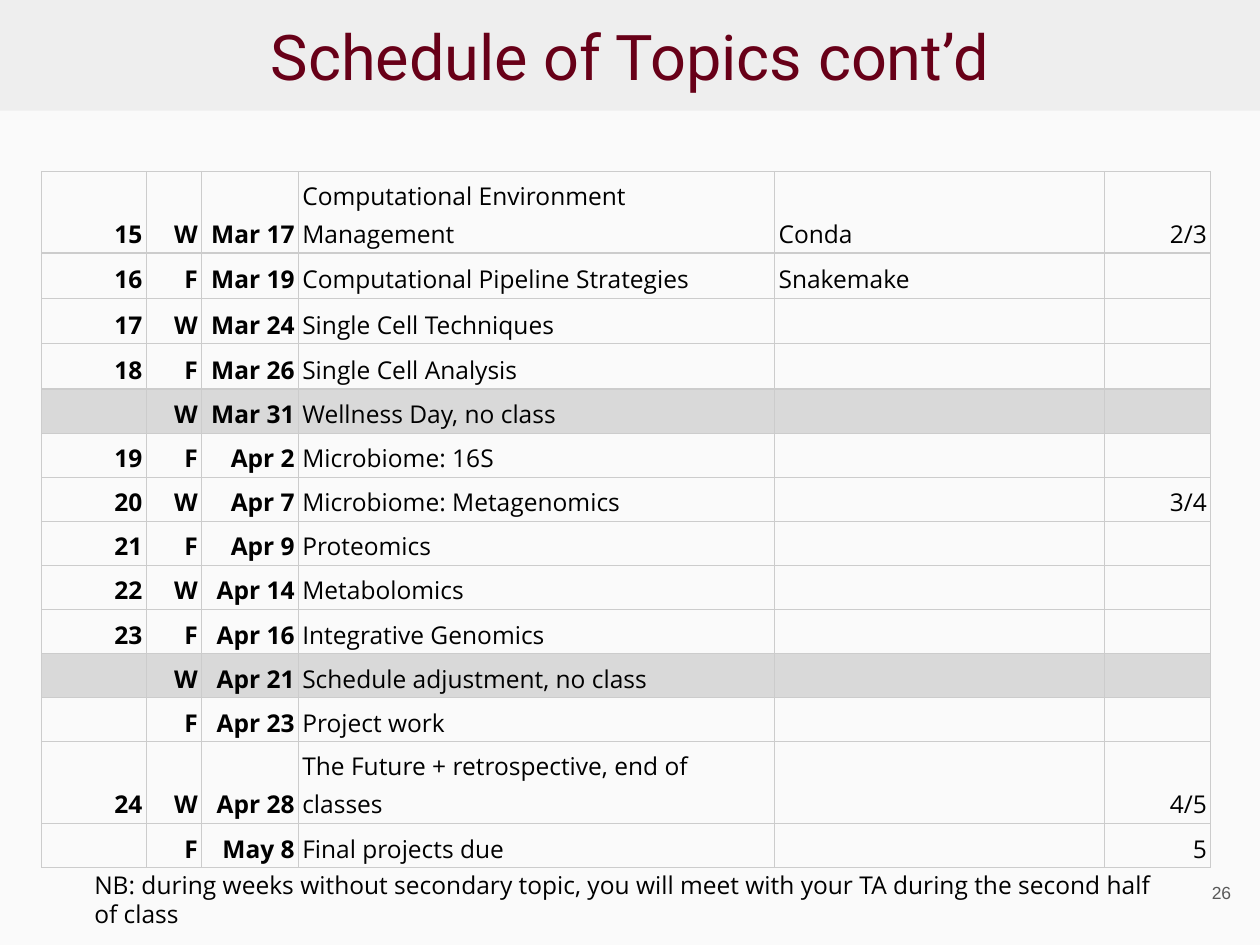
from typing import NamedTuple

from lxml import etree
from pptx import Presentation, util as u
from pptx.dml.color import RGBColor
from pptx.enum import text
from pptx.oxml.ns import qn

COLORS = {"page": "FAFAFA", "band": "EEEEEE", "title": "680018", "ink": "000000",
          "number": "595959", "grid": "CCCCCC", "no_class": "D9D9D9"}
WIDTH, HEIGHT = u.Inches(10), u.Inches(7.5)
LEFT, RIGHT, CENTER = text.PP_ALIGN.LEFT, text.PP_ALIGN.RIGHT, text.PP_ALIGN.CENTER


class Column(NamedTuple):
    width: float
    align: text.PP_ALIGN = LEFT
    bold: bool = False


class Session(NamedTuple):
    number: str
    day: str
    date: str
    topic: str
    secondary: str = ""
    assignment: str = ""


COLUMNS = [Column(0.83, RIGHT, True), Column(0.44, RIGHT, True), Column(0.77, RIGHT, True),
           Column(3.78), Column(2.62), Column(0.84, RIGHT)]
SESSIONS = [
    Session("15", "W", "Mar 17", "Computational Environment Management", "Conda", "2/3"),
    Session("16", "F", "Mar 19", "Computational Pipeline Strategies", "Snakemake"),
    Session("17", "W", "Mar 24", "Single Cell Techniques"),
    Session("18", "F", "Mar 26", "Single Cell Analysis"),
    Session("", "W", "Mar 31", "Wellness Day, no class"),
    Session("19", "F", "Apr 2", "Microbiome: 16S"),
    Session("20", "W", "Apr 7", "Microbiome: Metagenomics", assignment="3/4"),
    Session("21", "F", "Apr 9", "Proteomics"),
    Session("22", "W", "Apr 14", "Metabolomics"),
    Session("23", "F", "Apr 16", "Integrative Genomics"),
    Session("", "W", "Apr 21", "Schedule adjustment, no class"),
    Session("", "F", "Apr 23", "Project work"),
    Session("24", "W", "Apr 28", "The Future + retrospective, end of classes", assignment="4/5"),
    Session("", "F", "May 8", "Final projects due", assignment="5"),
]


def rgb(name: str) -> RGBColor:
    return RGBColor.from_string(COLORS[name])


def write(p, words: str, size: float, font: str, color: str, align=LEFT, bold=False) -> None:
    p.alignment = align
    r = p.add_run()
    r.text = words
    r.font.size, r.font.name, r.font.bold = u.Pt(size), font, bold
    r.font.color.rgb = rgb(color)


def frame(sp, anchor):
    """Set even insets, wrapping and anchor; return the text frame."""
    tf = sp.text_frame
    tf.word_wrap, tf.auto_size = True, text.MSO_AUTO_SIZE.NONE
    tf.vertical_anchor = anchor
    tf.margin_left = tf.margin_right = tf.margin_top = tf.margin_bottom = u.Inches(0.1)
    return tf


def place(sp, x: float, y: float, w: float, h: float) -> None:
    """Position a shape by shares of the slide's size."""
    sp.left, sp.top = int(WIDTH * x), int(HEIGHT * y)
    sp.width, sp.height = int(WIDTH * w), int(HEIGHT * h)


def add_text(s, box, words, size, font, color, align, anchor) -> None:
    sp = s.shapes.add_textbox(0, 0, 0, 0)
    place(sp, *box)
    write(frame(sp, anchor).paragraphs[0], words, size, font, color, align)


def add_borders(cell) -> None:
    tc_pr = cell._tc.get_or_add_tcPr()
    for side in ("a:lnL", "a:lnR", "a:lnT", "a:lnB"):
        ln = etree.SubElement(tc_pr, qn(side), w=str(u.Pt(0.75)))
        fill = etree.SubElement(ln, qn("a:solidFill"))
        etree.SubElement(fill, qn("a:srgbClr"), val=COLORS["grid"])


def fill_cell(cell, words: str, col: Column, shaded: bool) -> None:
    cell.margin_left = cell.margin_right = u.Inches(0.03)
    cell.margin_top = cell.margin_bottom = u.Inches(0.02)
    cell.vertical_anchor = text.MSO_ANCHOR.BOTTOM
    add_borders(cell)
    if shaded:
        cell.fill.solid()
        cell.fill.fore_color.rgb = rgb("no_class")
    else:
        cell.fill.background()
    if words:
        p = cell.text_frame.paragraphs[0]
        p.line_spacing = 1.15
        write(p, words, 14, "Open Sans", "ink", col.align, col.bold)


def add_schedule(s) -> None:
    row_height = u.Inches(0.35)
    table = s.shapes.add_table(len(SESSIONS), len(COLUMNS), u.Inches(0.33), u.Inches(1.36),
                               u.Inches(sum(c.width for c in COLUMNS)),
                               row_height * len(SESSIONS)).table
    table.first_row = table.horz_banding = False
    for j, col in enumerate(COLUMNS):
        table.columns[j].width = u.Inches(col.width)
    for i, session in enumerate(SESSIONS):
        table.rows[i].height = u.Inches(0.36) if i < 4 else row_height
        shaded = session.topic.endswith("no class")
        for j, (words, col) in enumerate(zip(session, COLUMNS)):
            fill_cell(table.cell(i, j), words, col, shaded)


def main() -> None:
    prs = Presentation()
    prs.slide_width, prs.slide_height = WIDTH, HEIGHT
    s = prs.slides.add_slide(prs.slide_layouts[5])
    s.background.fill.solid()
    s.background.fill.fore_color.rgb = rgb("page")

    # Title band
    title = s.shapes.title
    place(title, 0, 0, 1, 0.117)
    title.fill.solid()
    title.fill.fore_color.rgb = rgb("band")
    tf = frame(title, text.MSO_ANCHOR.MIDDLE)
    write(tf.paragraphs[0], "Schedule of Topics cont’d", 36, "Roboto", "title", CENTER)

    # Slide number
    add_text(s, (0.927, 0.907, 0.06, 0.076), "26", 10, "Arial", "number",
             RIGHT, text.MSO_ANCHOR.MIDDLE)

    # Schedule table
    add_schedule(s)

    # Footnote
    add_text(s, (0.065, 0.907, 0.87, 0.09),
             "NB: during weeks without secondary topic, you will meet with your TA "
             "during the second half of class",
             14, "Open Sans", "ink", LEFT, text.MSO_ANCHOR.TOP)

    prs.save("out.pptx")


if __name__ == "__main__":
    main()
